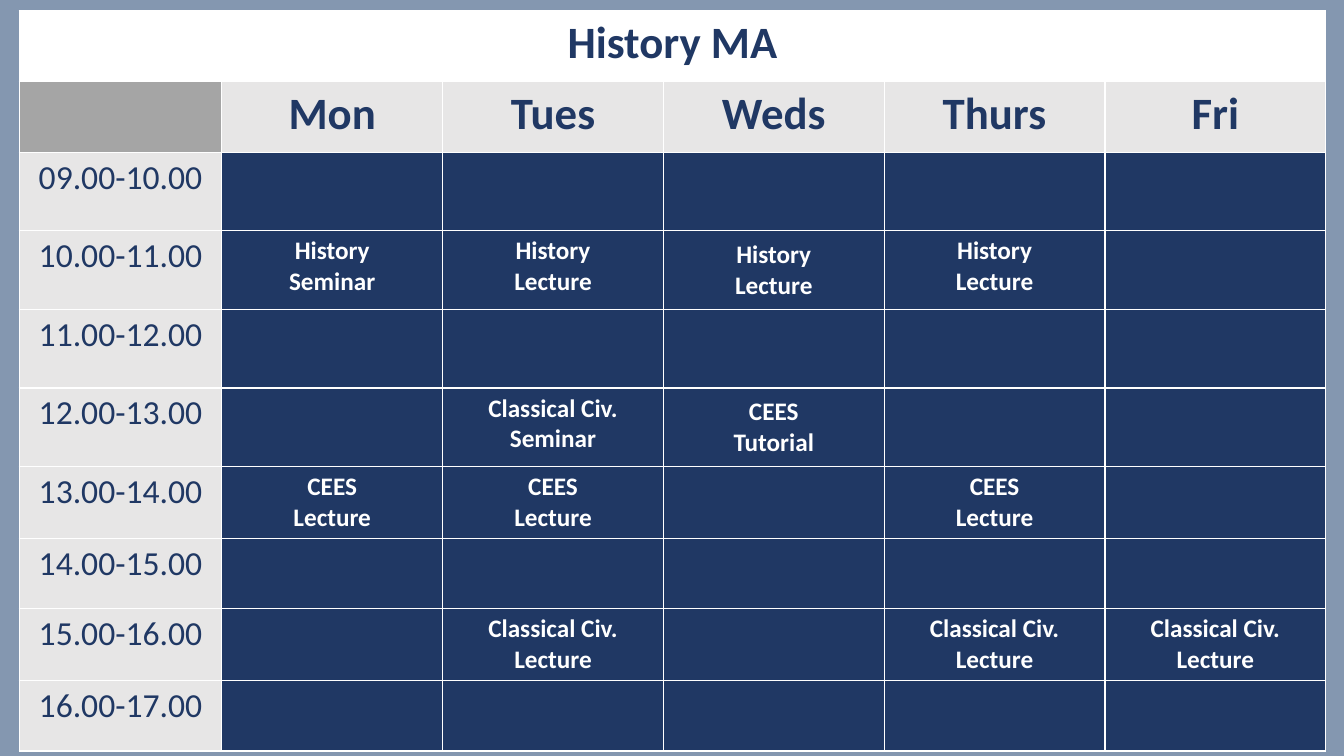
from dataclasses import dataclass

from lxml import etree
from pptx import Presentation
from pptx.dml.color import RGBColor
from pptx.enum.text import MSO_ANCHOR, PP_ALIGN
from pptx.oxml.ns import qn
from pptx.util import Inches, Pt

CENTER = PP_ALIGN.CENTER
TOP, MIDDLE = MSO_ANCHOR.TOP, MSO_ANCHOR.MIDDLE


@dataclass(frozen=True)
class Theme:
    font: str = "Calibri"
    background: str = "8497B0"
    navy: str = "203864"
    white: str = "FFFFFF"
    light: str = "E7E6E6"
    corner: str = "A5A5A5"
    heading_size: int = 32
    time_size: int = 24
    class_size: int = 18
    border_width: int = 1


THEME = Theme()
DAYS = ["Mon", "Tues", "Weds", "Thurs", "Fri"]
FIRST_HOUR = 9
HEADER_ROWS = 2
COLUMN_WIDTHS = [2.01] + [2.19] * len(DAYS)
ROW_HEIGHTS = [0.7] * 2 + [0.78] * 4 + [0.7] * 4
CLASSES = {
    ("Mon", 10): ("History", "Seminar"),
    ("Tues", 10): ("History", "Lecture"),
    ("Weds", 10): ("History", "Lecture"),
    ("Thurs", 10): ("History", "Lecture"),
    ("Tues", 12): ("Classical Civ.", "Seminar"),
    ("Weds", 12): ("CEES", "Tutorial"),
    ("Mon", 13): ("CEES", "Lecture"),
    ("Tues", 13): ("CEES", "Lecture"),
    ("Thurs", 13): ("CEES", "Lecture"),
    ("Tues", 15): ("Classical Civ.", "Lecture"),
    ("Thurs", 15): ("Classical Civ.", "Lecture"),
    ("Fri", 15): ("Classical Civ.", "Lecture"),
}
MIDDLE_CLASSES = {("Weds", 10), ("Weds", 12), ("Fri", 15)}


def fill_cell(cell, fill, lines=(), size=THEME.class_size, color=THEME.navy,
              bold=True, anchor=TOP):
    """Colour and border a cell, and write one centred paragraph per line."""
    cell.fill.solid()
    cell.fill.fore_color.rgb = RGBColor.from_string(fill)
    cell.vertical_anchor = anchor
    properties = cell._tc.get_or_add_tcPr()
    for position, side in enumerate(("a:lnL", "a:lnR", "a:lnT", "a:lnB")):
        border = etree.Element(qn(side), w=str(Pt(THEME.border_width)))
        solid = etree.SubElement(border, qn("a:solidFill"))
        etree.SubElement(solid, qn("a:srgbClr"), val=THEME.white)
        properties.insert(position, border)

    for number, line in enumerate(lines):
        frame = cell.text_frame
        paragraph = frame.add_paragraph() if number else frame.paragraphs[0]
        paragraph.alignment = CENTER
        run = paragraph.add_run()
        run.text = line
        run.font.name = THEME.font
        run.font.size = Pt(size)
        run.font.bold = bold
        run.font.color.rgb = RGBColor.from_string(color)


presentation = Presentation()
presentation.slide_width = Inches(13.33)
presentation.slide_height = Inches(7.5)
slide = presentation.slides.add_slide(presentation.slide_layouts[6])
slide.background.fill.solid()
slide.background.fill.fore_color.rgb = RGBColor.from_string(THEME.background)

timetable = slide.shapes.add_table(
    len(ROW_HEIGHTS), len(COLUMN_WIDTHS), Inches(0.19), Inches(0.11),
    Inches(sum(COLUMN_WIDTHS)), Inches(sum(ROW_HEIGHTS))).table
for column, width in zip(timetable.columns, COLUMN_WIDTHS):
    column.width = Inches(width)
for row, height in zip(timetable.rows, ROW_HEIGHTS):
    row.height = Inches(height)

# Title and day headings
title_cell = timetable.cell(0, 0)
title_cell.merge(timetable.cell(0, len(DAYS)))
fill_cell(title_cell, THEME.white, ["History MA"], THEME.heading_size)
fill_cell(timetable.cell(1, 0), THEME.corner)
for column_index, day in enumerate(DAYS, start=1):
    fill_cell(timetable.cell(1, column_index), THEME.light, [day],
              THEME.heading_size)

# One row per hour
for row_index in range(HEADER_ROWS, len(ROW_HEIGHTS)):
    hour = FIRST_HOUR + row_index - HEADER_ROWS
    fill_cell(timetable.cell(row_index, 0), THEME.light,
              [f"{hour:02d}.00-{hour + 1}.00"], THEME.time_size, bold=False)
    for column_index, day in enumerate(DAYS, start=1):
        slot = (day, hour)
        fill_cell(timetable.cell(row_index, column_index), THEME.navy,
                  CLASSES.get(slot, ()), color=THEME.white,
                  anchor=MIDDLE if slot in MIDDLE_CLASSES else TOP)

presentation.save("out.pptx")
